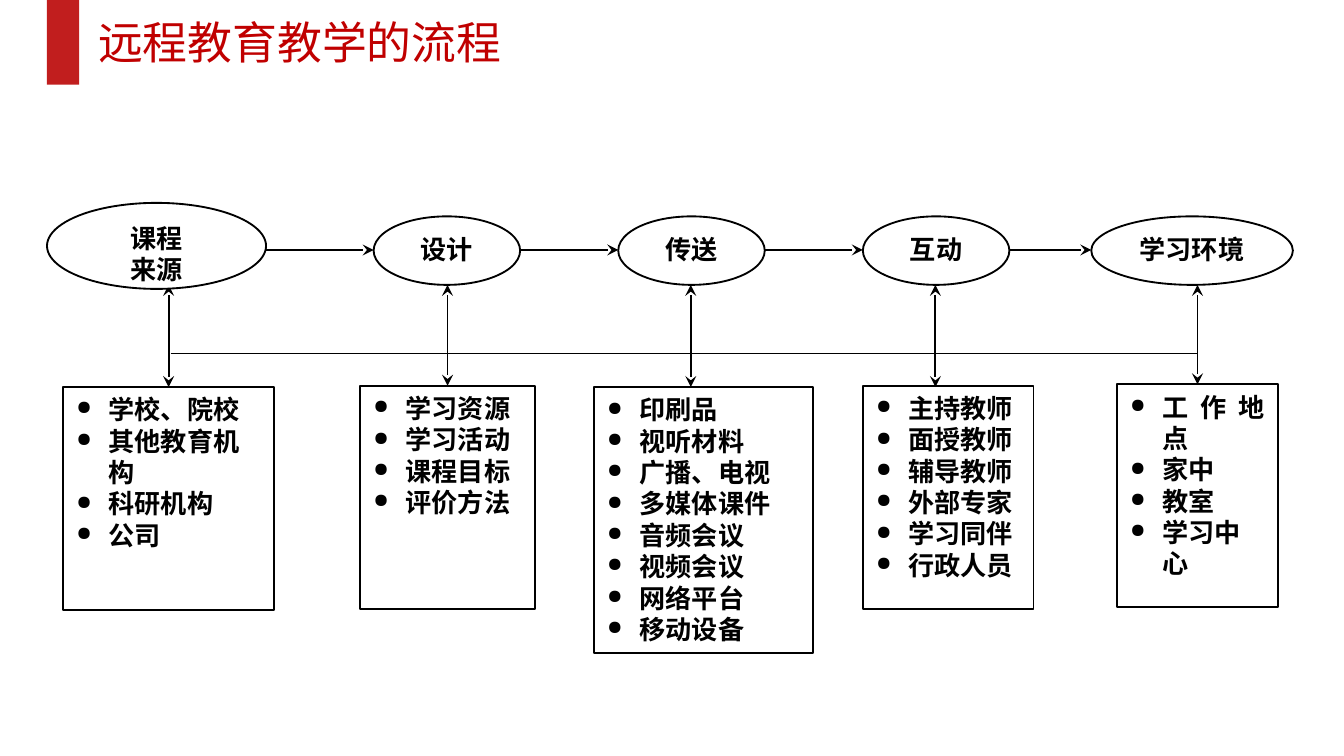
"""Build the slide on the distance-teaching process."""
from dataclasses import dataclass

import pptx
import pptx.dml.color
import pptx.enum.shapes
import pptx.enum.text
import pptx.oxml
import pptx.oxml.ns
import pptx.util
from pptx.util import Inches

FONT = "Noto Sans CJK SC"
BLACK, WHITE, TITLE_RED, BAR_RED = "000000", "FFFFFF", "C00000", "C11E1E"
SHAPES = pptx.enum.shapes.MSO_SHAPE
ALIGN = pptx.enum.text.PP_ALIGN
ANCHOR = pptx.enum.text.MSO_ANCHOR
FLOW_Y, ARROW_TOP, ARROW_BOTTOM, BUS_Y = 1.86, 2.12, 2.88, 2.63
HANGING = 0.24


@dataclass
class Area:
    left: float
    top: float
    width: float
    height: float

    @property
    def right(self) -> float:
        return self.left + self.width

    @property
    def center(self) -> float:
        return self.left + self.width / 2

    def lengths(self) -> list:
        return [Inches(v) for v in (self.left, self.top, self.width, self.height)]


@dataclass
class Stage:
    name: list[str]
    oval: Area
    items: list[str]
    box: Area
    arrow_x: float


STAGES = [
    Stage(["课程", "来源"], Area(0.35, 1.51, 1.63, 0.64),
          ["学校、院校", "其他教育机构", "科研机构", "公司"],
          Area(0.47, 2.88, 1.57, 1.66), 1.26),
    Stage(["设计"], Area(2.78, 1.61, 1.09, 0.51),
          ["学习资源", "学习活动", "课程目标", "评价方法"],
          Area(2.68, 2.87, 1.3, 1.66), 3.32),
    Stage(["传送"], Area(4.6, 1.61, 1.09, 0.51),
          ["印刷品", "视听材料", "广播、电视", "多媒体课件",
           "音频会议", "视频会议", "网络平台", "移动设备"],
          Area(4.42, 2.88, 1.63, 1.98), 5.14),
    Stage(["互动"], Area(6.42, 1.61, 1.09, 0.51),
          ["主持教师", "面授教师", "辅导教师", "外部专家", "学习同伴", "行政人员"],
          Area(6.42, 2.87, 1.27, 1.66), 6.96),
    Stage(["学习环境"], Area(8.12, 1.61, 1.5, 0.51),
          ["工作地点", "家中", "教室", "学习中心"],
          Area(8.31, 2.86, 1.2, 1.66), 8.91),
]


def rgb(value: str) -> pptx.dml.color.RGBColor:
    """Turn a hex string into a colour."""
    return pptx.dml.color.RGBColor.from_string(value)


def apply(target, values: dict) -> None:
    """Set each attribute named in the dict."""
    for key, value in values.items():
        setattr(target, key, value)


def add_element(parent, tag: str, **attributes: str) -> None:
    """Append a drawing element with the given attributes."""
    element = pptx.oxml.parse_xml(f"<a:{tag} {pptx.oxml.ns.nsdecls('a')}/>")
    for key, value in attributes.items():
        element.set(key, value)
    parent.append(element)


def write(paragraph, text: str, size: int, color: str, bold: bool) -> None:
    """Write one formatted run into a paragraph."""
    run = paragraph.add_run()
    run.text = text
    apply(run.font, {"name": FONT, "size": pptx.util.Pt(size), "bold": bold})
    run.font.color.rgb = rgb(color)
    add_element(run.font._element, "ea", typeface=FONT)


def add_panel(slide, preset, area: Area, fill: str, outlined: bool = True):
    """Add a flat filled shape, outlined in black if asked."""
    panel = slide.shapes.add_shape(preset, *area.lengths())
    panel.shadow.inherit = False
    panel.fill.solid()
    panel.fill.fore_color.rgb = rgb(fill)
    if outlined:
        panel.line.color.rgb = rgb(BLACK)
        panel.line.width = pptx.util.Pt(1)
    else:
        panel.line.fill.background()
    return panel


def fill_lines(panel, lines: list[str], bulleted: bool) -> None:
    """Write bold lines from the top of a shape."""
    frame = panel.text_frame
    apply(frame, {"word_wrap": True, "vertical_anchor": ANCHOR.TOP})
    for index, text in enumerate(lines):
        paragraph = frame.add_paragraph() if index else frame.paragraphs[0]
        paragraph.alignment = ALIGN.LEFT if bulleted else ALIGN.CENTER
        paragraph.line_spacing = pptx.util.Pt(16.8)
        if bulleted:
            if index == 0:
                paragraph.alignment = ALIGN.JUSTIFY
            properties = paragraph._p.get_or_add_pPr()
            properties.set("marL", str(Inches(HANGING)))
            properties.set("indent", str(-Inches(HANGING)))
            add_element(properties, "buSzPct", val="75000")
            add_element(properties, "buChar", char="●")
        write(paragraph, text, 14, BLACK, True)


def add_line(slide, start: tuple[float, float], end: tuple[float, float],
             head: bool = False, tail: bool = False):
    """Add a black line with optional stealth arrowheads."""
    line = slide.shapes.add_connector(
        pptx.enum.shapes.MSO_CONNECTOR.STRAIGHT, *map(Inches, start + end))
    line.line.color.rgb = rgb(BLACK)
    line.line.width = pptx.util.Pt(1)
    for tag, wanted in (("headEnd", head), ("tailEnd", tail)):
        if wanted:
            add_element(line.line._get_or_add_ln(), tag, type="stealth")
    add_element(line._element.spPr, "effectLst")
    return line


def add_title(slide, text: str) -> None:
    """Place the slide title beside its red bar."""
    title = slide.shapes.title
    area = Area(0.63, 0.06, 3.74, 0.5)
    apply(title, dict(zip(("left", "top", "width", "height"), area.lengths())))
    apply(title.text_frame, {"word_wrap": True, "vertical_anchor": ANCHOR.MIDDLE})
    paragraph = title.text_frame.paragraphs[0]
    paragraph.alignment = ALIGN.LEFT
    write(paragraph, text, 24, TITLE_RED, False)
    add_panel(slide, SHAPES.RECTANGLE, Area(0.35, 0, 0.24, 0.63), BAR_RED, False)


def add_stage(slide, stage: Stage) -> None:
    """Draw a stage oval, its list and the arrow between them."""
    box = add_panel(slide, SHAPES.RECTANGLE, stage.box, WHITE)
    fill_lines(box, stage.items, True)
    centered = abs(stage.box.center - stage.arrow_x) < 0.02
    x = stage.box.center if centered else stage.arrow_x
    arrow = add_line(slide, (x, ARROW_TOP), (x, ARROW_BOTTOM), True, True)
    if centered:
        arrow.end_connect(box, 0)
    oval = add_panel(slide, SHAPES.OVAL, stage.oval, WHITE)
    fill_lines(oval, stage.name, False)


def main() -> None:
    """Build and save the presentation."""
    deck = pptx.Presentation()
    apply(deck, {"slide_width": Inches(10), "slide_height": Inches(10) * 9 // 16})
    slide = deck.slides.add_slide(deck.slide_layouts.get_by_name("Title Only"))
    slide.background.fill.solid()
    slide.background.fill.fore_color.rgb = rgb(WHITE)
    add_title(slide, "远程教育教学的流程")
    for stage in STAGES:
        add_stage(slide, stage)
    for stage, following in zip(STAGES, STAGES[1:]):
        add_line(slide, (stage.oval.right, FLOW_Y),
                 (following.oval.left, FLOW_Y), tail=True)
    add_line(slide, (1.27, BUS_Y), (STAGES[-1].arrow_x, BUS_Y))
    deck.save("out.pptx")


if __name__ == "__main__":
    main()
